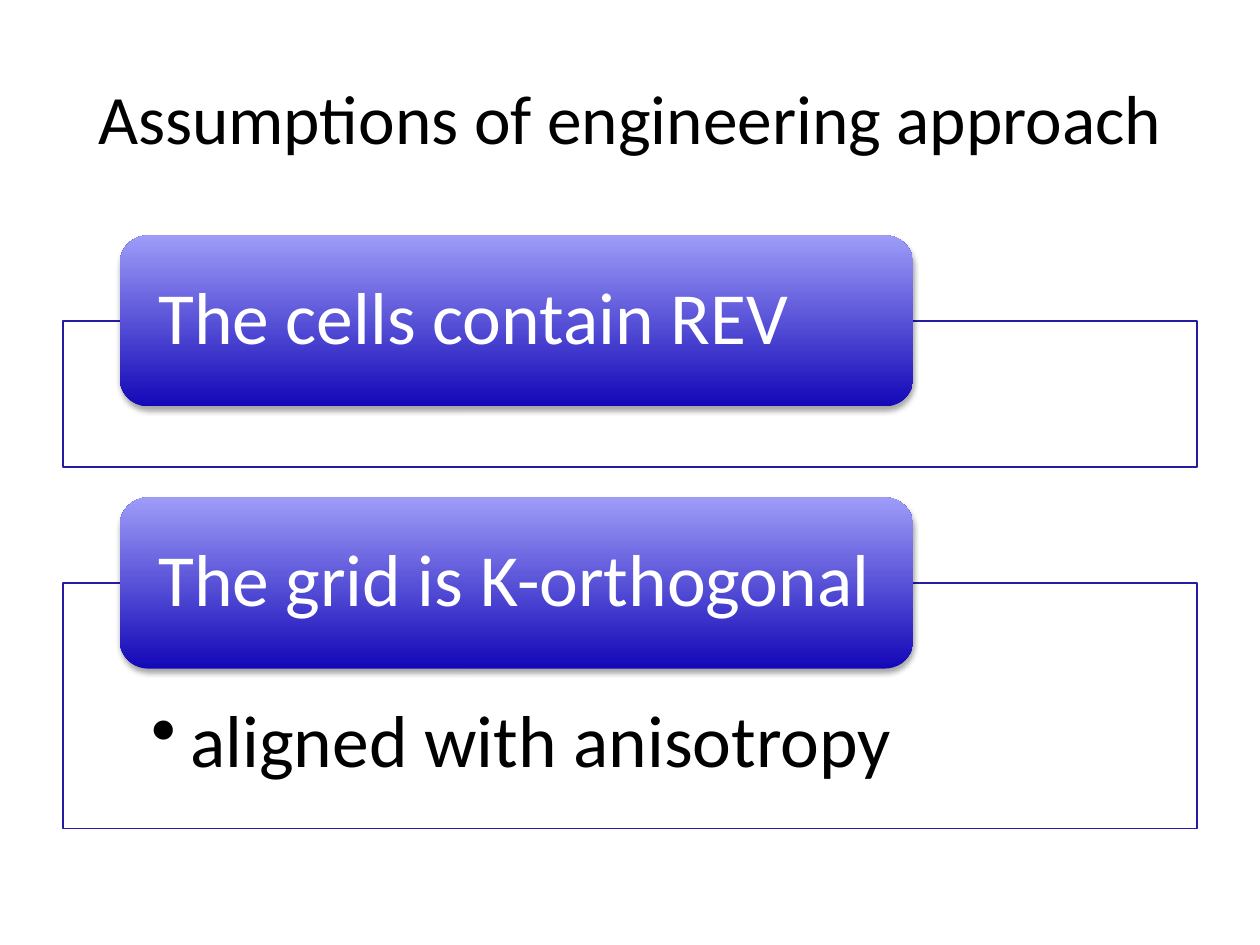
from lxml.etree import SubElement
from pptx import Presentation
from pptx.dml.color import RGBColor
from pptx.enum.shapes import MSO_SHAPE
from pptx.enum.text import MSO_ANCHOR, PP_ALIGN
from pptx.oxml.ns import qn
from pptx.util import Pt

TITLE = "Assumptions of engineering approach"
# header, bullets, frame top, frame height
SECTIONS = [
    ("The cells contain REV", [], 183.4, 83.5),
    ("The grid is K-orthogonal", ["aligned with anisotropy"], 333.2, 140.4),
]

FONT = "Calibri"
BLACK = RGBColor(0, 0, 0)
WHITE = RGBColor(255, 255, 255)
FRAME_LINE = RGBColor(0x25, 0x1C, 0xA3)
DARK_BLUE = RGBColor(0x13, 0x08, 0xB7)
LIGHT_BLUE = RGBColor(0x9E, 0x9C, 0xF8)

MARGIN, FRAME_WIDTH = 36, 648
HEADER_LEFT, HEADER_WIDTH, HEADER_HEIGHT = 68.4, 453.6, 97.8
BULLET_INDENT = 22.5


def set_frame(shape, anchor, left=7.2, top=3.6, right=7.2, bottom=3.6):
    frame = shape.text_frame
    frame.word_wrap = True
    frame.vertical_anchor = anchor
    frame.margin_left, frame.margin_right = Pt(left), Pt(right)
    frame.margin_top, frame.margin_bottom = Pt(top), Pt(bottom)
    return frame


def write(paragraph, text, size, color, align=PP_ALIGN.LEFT, spacing=0.9):
    paragraph.alignment = align
    paragraph.line_spacing = spacing
    run = paragraph.add_run()
    run.text = text
    run.font.name = FONT
    run.font.size = Pt(size)
    run.font.color.rgb = color


def add_bullet(paragraph):
    properties = paragraph._p.get_or_add_pPr()
    properties.set("marL", str(Pt(BULLET_INDENT)))
    properties.set("indent", str(-Pt(BULLET_INDENT)))
    SubElement(properties, qn("a:buChar"), char="•")


def add_shadow(shape):
    effects = shape._element.spPr.find(qn("a:effectLst"))
    shadow = SubElement(effects, qn("a:outerShdw"), blurRad=str(Pt(3.1)),
                        dist=str(Pt(1.8)), dir="5400000", rotWithShape="0")
    color = SubElement(shadow, qn("a:srgbClr"), val="000000")
    SubElement(color, qn("a:alpha"), val="35000")


def add_section_frame(slide, bullets, top, height):
    shape = slide.shapes.add_shape(MSO_SHAPE.RECTANGLE, Pt(MARGIN), Pt(top),
                                   Pt(FRAME_WIDTH), Pt(height))
    shape.shadow.inherit = False
    shape.fill.solid()
    shape.fill.fore_color.rgb = WHITE
    color = shape._element.spPr.find(qn("a:solidFill")).find(qn("a:srgbClr"))
    SubElement(color, qn("a:alpha"), val="90000")
    shape.line.color.rgb = FRAME_LINE
    shape.line.width = Pt(0.75)
    frame = set_frame(shape, MSO_ANCHOR.TOP, 50.4, 69.1, 50.4, 23.8)
    for index, text in enumerate(bullets):
        paragraph = frame.add_paragraph() if index else frame.paragraphs[0]
        add_bullet(paragraph)
        write(paragraph, text, 42, BLACK)


def add_header(slide, text, frame_top):
    """Place the header centred on the top edge of its frame."""
    shape = slide.shapes.add_shape(
        MSO_SHAPE.ROUNDED_RECTANGLE, Pt(HEADER_LEFT),
        Pt(frame_top - HEADER_HEIGHT / 2), Pt(HEADER_WIDTH), Pt(HEADER_HEIGHT))
    shape.line.fill.background()
    shape.shadow.inherit = False
    add_shadow(shape)
    shape.fill.gradient()
    shape.fill.gradient_angle = 90
    for stop, position, color in zip(shape.fill.gradient_stops, (0, 1),
                                     (DARK_BLUE, LIGHT_BLUE)):
        stop.position = position
        stop.color.rgb = color
    frame = set_frame(shape, MSO_ANCHOR.MIDDLE, 17.3, 0, 17.3, 0)
    write(frame.paragraphs[0], text, 42, WHITE)


def main():
    presentation = Presentation()
    presentation.slide_width, presentation.slide_height = Pt(720), Pt(540)
    slide = presentation.slides.add_slide(presentation.slide_layouts[6])

    title = slide.shapes.add_textbox(Pt(MARGIN), Pt(21.6), Pt(FRAME_WIDTH), Pt(90))
    frame = set_frame(title, MSO_ANCHOR.MIDDLE)
    write(frame.paragraphs[0], TITLE, 39.6, BLACK, PP_ALIGN.CENTER, 1.0)

    for header, bullets, top, height in SECTIONS:
        add_section_frame(slide, bullets, top, height)
        add_header(slide, header, top)

    presentation.save("out.pptx")


if __name__ == "__main__":
    main()
